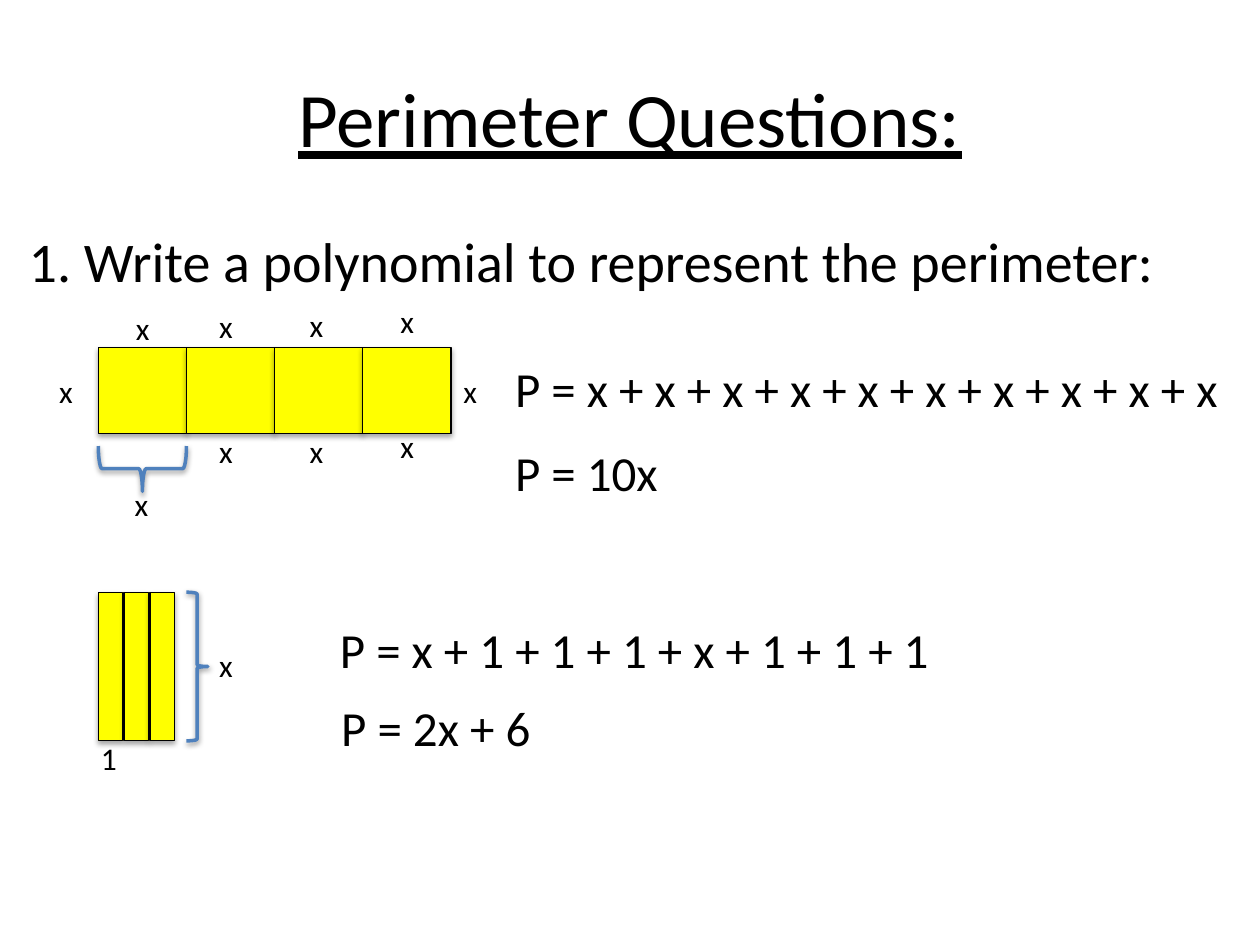
from lxml.etree import SubElement
from pptx import Presentation
from pptx.dml.color import RGBColor
from pptx.enum.shapes import MSO_SHAPE as Shape
from pptx.enum.text import MSO_ANCHOR as Anchor, MSO_AUTO_SIZE as AutoSize, PP_ALIGN as Align
from pptx.oxml.ns import qn
from pptx.util import Inches, Pt

BLACK = RGBColor(0x00, 0x00, 0x00)
YELLOW = RGBColor(0xFF, 0xFF, 0x00)
BLUE = RGBColor(0x4F, 0x81, 0xBD)
COLUMNS, ROWS = 100, 75


def write(frame, text, size=18, align=Align.LEFT, underline=None, before=0):
    frame.word_wrap = True
    paragraph = frame.paragraphs[0]
    paragraph.alignment = align
    paragraph.space_before = Pt(before)
    run = paragraph.add_run()
    run.text = text
    run.font.name = "Calibri"
    run.font.size = Pt(size)
    run.font.color.rgb = BLACK
    run.font.underline = underline


class Board:
    """The current slide, placed on a grid of COLUMNS by ROWS."""

    def __init__(self, deck):
        self.column = deck.slide_width / COLUMNS
        self.row = deck.slide_height / ROWS
        self.slide = deck.slides.add_slide(deck.slide_layouts[5])

    def area(self, left, top, width, height):
        return (round(left * self.column), round(top * self.row),
                round(width * self.column), round(height * self.row))

    def title(self, text, *area):
        title = self.slide.shapes.title
        title.left, title.top, title.width, title.height = self.area(*area)
        title.text_frame.vertical_anchor = Anchor.MIDDLE
        write(title.text_frame, text, size=44, align=Align.CENTER, underline=True)

    def text(self, text, *area, grow=True, **style):
        frame = self.slide.shapes.add_textbox(*self.area(*area)).text_frame
        write(frame, text, **style)
        frame.auto_size = AutoSize.SHAPE_TO_FIT_TEXT if grow else AutoSize.NONE

    def label(self, text, left, top, width=4.1):
        self.text(text, left, top, width, 4)

    def equation(self, text, left, top, width):
        self.text(text, left, top, width, 5.7, size=28)

    def outline(self, kind, area, color, weight, shadow_opacity, shadow_distance):
        shape = self.slide.shapes.add_shape(kind, *self.area(*area))
        shape.line.color.rgb = color
        shape.line.width = Pt(weight)
        shape.fill.background()
        self.shadow(shape, shadow_opacity, shadow_distance)
        return shape

    def shadow(self, shape, opacity, distance):
        shape.shadow.inherit = False
        effects = shape.element.spPr.find(qn("a:effectLst"))
        outer = SubElement(effects, qn("a:outerShdw"), blurRad=str(Pt(3.1)),
                           dist=str(Pt(distance)), dir="5400000", rotWithShape="0")
        tint = SubElement(outer, qn("a:srgbClr"), val=str(BLACK))
        SubElement(tint, qn("a:alpha"), val=str(opacity * 1000))

    def tiles(self, count, left, top, width, height, step):
        for i in range(count):
            tile = self.outline(Shape.RECTANGLE, (left + i * step, top, width, height),
                                BLACK, 0.75, 35, 1.8)
            tile.fill.solid()
            tile.fill.fore_color.rgb = YELLOW

    def brace(self, *area, rotation=0):
        brace = self.outline(Shape.RIGHT_BRACE, area, BLUE, 2, 38, 1.6)
        brace.rotation = rotation


def main():
    deck = Presentation()
    deck.slide_width, deck.slide_height = Inches(10), Inches(7.5)
    board = Board(deck)
    board.title("Perimeter Questions:", 5, 3, 90, 12.5)
    board.text("1. Write a polynomial to represent the perimeter:",
               1.3, 17.5, 96, 49.5, grow=False, size=32, before=6.4)

    # Four square tiles in a row
    board.tiles(4, 7.8, 27.6, 7, 6.8, step=7)
    board.brace(9.5, 33.7, 3.6, 7, rotation=90)
    above = [(9.8, 24), (16.4, 23.9), (23.6, 23.8), (30.8, 23.5)]
    below = [(9.7, 38), (16.4, 33.8), (23.6, 33.8), (30.8, 33.4)]
    sides = [(3.7, 29), (35.8, 29)]
    for left, top in above + below + sides:
        board.label("x", left, top)
    board.equation("P = " + " + ".join("x" * 10), 39.9, 28, 60.1)
    board.equation("P = 10x", 39.9, 34.6, 37.3)

    # Three narrow tiles side by side
    board.tiles(3, 7.8, 47, 1.95, 11.8, step=2.05)
    board.brace(14.8, 47, 1.7, 11.8)
    board.label("x", 16.4, 50.8)
    board.label("1", 7.1, 58.2, width=1.9)
    board.equation("P = x + 1 + 1 + 1 + x + 1 + 1 + 1", 26, 48.7, 49.7)
    board.equation("P = 2x + 6", 26.1, 54.9, 36.8)

    deck.save("out.pptx")


if __name__ == "__main__":
    main()
